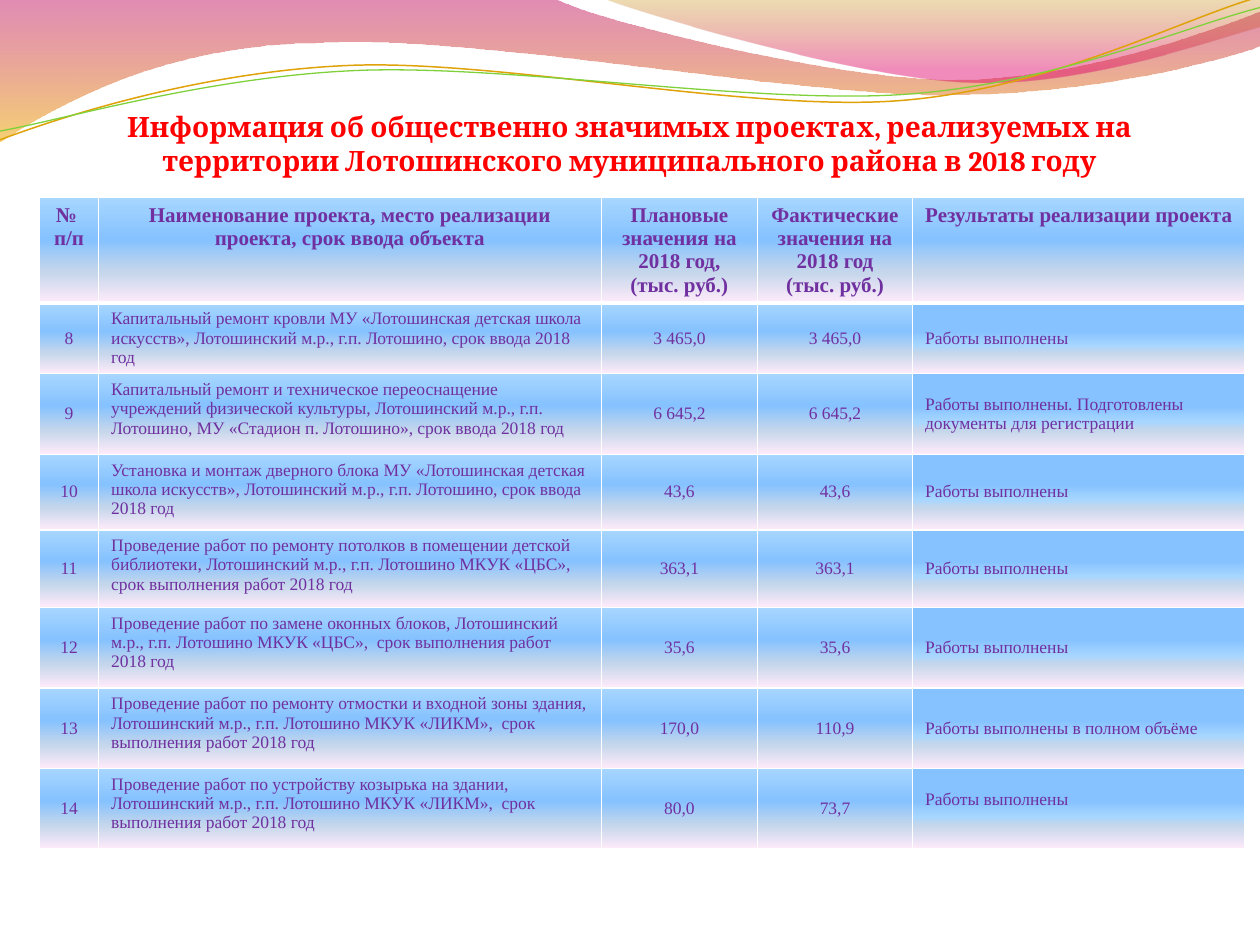
from lxml import etree
from pptx import Presentation
from pptx.dml.color import RGBColor
from pptx.enum.text import MSO_ANCHOR, MSO_AUTO_SIZE, PP_ALIGN
from pptx.oxml.ns import qn
from pptx.util import Inches, Pt

CENTER, LEFT = PP_ALIGN.CENTER, PP_ALIGN.LEFT
TOP, MIDDLE, BOTTOM = MSO_ANCHOR.TOP, MSO_ANCHOR.MIDDLE, MSO_ANCHOR.BOTTOM

# Gradient stops are (position %, colour, opacity %)
THEME = {
    "title_font": "Cambria", "title_size": Pt(16), "title_color": "FF0000",
    "table_font": "Times New Roman", "table_color": "7030A0",
    "header_size": Pt(12), "body_size": Pt(10),
    "border": "FFFFFF", "border_width": Pt(1), "header_rule": Pt(3),
    "cell": [(0, "A7D6FF", 100), (40, "85C2FF", 100),
             (70, "C4D6EB", 100), (100, "FFEBFA", 100)],
    "result_cell": [(40, "85C2FF", 100), (60, "A7D6FF", 100),
                    (70, "C4D6EB", 100), (100, "FFEBFA", 100)],
    "left_wave": [(0, "BD0059", 45), (100, "F0AB00", 55)],
    "right_wave": [(0, "C38B00", 30), (80, "E1006B", 45)],
    "gold": "E0A209", "green": "7FD13B",
}

prs = Presentation()
prs.slide_width, prs.slide_height = Inches(10), Inches(7.5)
UNIT = prs.slide_width // 100  # the slide is a grid of 100 columns by 75 rows
slide = prs.slides.add_slide(prs.slide_layouts[5])


def fill_gradient(fill, owner, stops):
    """Fill from top to bottom with the given stops; owner is the XML element."""
    fill.gradient()
    fill.gradient_angle = 270
    stop_list = owner.find(".//" + qn("a:gsLst"))
    for old_stop in list(stop_list):
        stop_list.remove(old_stop)
    for position, color, opacity in stops:
        stop = etree.SubElement(stop_list, qn("a:gs"), pos=str(position * 1000))
        rgb = etree.SubElement(stop, qn("a:srgbClr"), val=color)
        if opacity < 100:
            etree.SubElement(rgb, qn("a:alpha"), val=str(opacity * 1000))


def add_wave(segments, closed):
    """Draw segments of 1 point (straight) or 3 points (cubic curve)."""
    points = [(x * UNIT, y * UNIT) for segment in segments for x, y in segment]
    builder = slide.shapes.build_freeform(*points[0], scale=1)
    builder.add_line_segments(points[1:], close=closed)
    wave = builder.convert_to_shape()
    wave.shadow.inherit = False
    straight_steps = iter(list(wave._element.iter(qn("a:lnTo"))))
    for segment in segments[1:]:
        steps = [next(straight_steps) for _ in segment]
        if len(steps) == 3:
            curve = etree.Element(qn("a:cubicBezTo"))
            steps[0].addprevious(curve)
            for step in steps:
                curve.append(step[0])
                step.getparent().remove(step)
    return wave


# Waves along the top, in grid units
bands = [
    ("left_wave", [
        [(0, -0.1)], [(44, -0.1)],
        [(47.6, 1.7), (66.4, 6.3), (75.8, 6.3)],
        [(85.3, 6.3), (95.8, 2.6), (100, 0.9)], [(100.1, 3.6)],
        [(98.3, 4.4), (87, 7.6), (74.6, 7.5)],
        [(62.2, 7.5), (38.2, 2.8), (25.7, 3.4)],
        [(12.9, 3.5), (4.6, 8.3), (-0.1, 11.3)]]),
    ("right_wave", [
        [(47.9, -0.1)],
        [(50.9, 1.1), (68.2, 6.2), (76.9, 6.5)],
        [(85.6, 6.9), (96.1, 3.2), (100, 2.1)], [(100, 0)]]),
]
for stops_name, segments in bands:
    band = add_wave(segments, True)
    fill_gradient(band.fill, band._element.spPr, THEME[stops_name])
    band.line.fill.background()

strands = [
    ("gold", 0.85, [
        [(0, 11.1)],
        [(4.8, 9.3), (15.8, 5.7), (27.7, 5.2)],
        [(39.5, 4.7), (59.3, 8.9), (71.3, 8)],
        [(83.3, 7.1), (93.8, 1.5), (99.8, -0.2)]]),
    ("green", 0.75, [
        [(0, 10.4)],
        [(4.7, 9.6), (16.4, 6.1), (28.3, 5.6)],
        [(40.3, 5.1), (59.7, 8.3), (71.7, 7.5)],
        [(83.6, 6.7), (94.1, 2.1), (100, 0.6)]]),
]
for color_name, width, segments in strands:
    strand = add_wave(segments, False)
    strand.fill.background()
    strand.line.color.rgb = RGBColor.from_string(THEME[color_name])
    strand.line.width = Pt(width)

# Title, in front of the waves
title = slide.shapes.title
slide.shapes._spTree.append(title._element)
title.left, title.top, title.width, title.height = (
    round(n * UNIT) for n in (5, 7.65, 90, 6.4))
heading = title.text_frame
heading.text = ("Информация об общественно значимых проектах, реализуемых на "
                "территории Лотошинского муниципального района в 2018 году")
heading.word_wrap, heading.auto_size = True, MSO_AUTO_SIZE.NONE
heading.vertical_anchor = BOTTOM
heading.margin_left = heading.margin_right = heading.margin_bottom = 0
heading.margin_top = UNIT // 2
heading.paragraphs[0].alignment = CENTER
title_font = heading.paragraphs[0].runs[0].font
title_font.name, title_font.size, title_font.bold = (
    THEME["title_font"], THEME["title_size"], True)
title_font.color.rgb = RGBColor.from_string(THEME["title_color"])

# Projects table
DONE = "Работы выполнены"
projects = [
    ("№  п/п", "Наименование проекта, место реализации проекта, срок ввода объекта",
     "Плановые значения на 2018 год, (тыс. руб.)",
     "Фактические значения на 2018 год (тыс. руб.)", "Результаты реализации проекта"),
    ("8", "Капитальный ремонт кровли МУ «Лотошинская детская школа искусств», "
     "Лотошинский м.р., г.п. Лотошино, срок ввода 2018 год", "3 465,0", "3 465,0", DONE),
    ("9", "Капитальный ремонт и техническое переоснащение  учреждений физической культуры, "
     "Лотошинский м.р., г.п. Лотошино, МУ «Стадион п. Лотошино», срок ввода 2018 год",
     "6 645,2", "6 645,2", DONE + ". Подготовлены документы для регистрации"),
    ("10", "Установка и монтаж дверного блока МУ «Лотошинская детская школа искусств», "
     "Лотошинский м.р., г.п. Лотошино, срок ввода 2018 год", "43,6", "43,6", DONE),
    ("11", "Проведение работ по ремонту потолков в помещении детской библиотеки, "
     "Лотошинский м.р., г.п. Лотошино МКУК «ЦБС»,  срок выполнения работ 2018 год",
     "363,1", "363,1", DONE),
    ("12", "Проведение работ по замене оконных блоков, Лотошинский м.р., "
     "г.п. Лотошино МКУК «ЦБС»,  срок выполнения работ 2018 год", "35,6", "35,6", DONE),
    ("13", "Проведение работ по ремонту отмостки и входной зоны здания, Лотошинский м.р., "
     "г.п. Лотошино МКУК «ЛИКМ»,  срок выполнения работ 2018 год",
     "170,0", "110,9", DONE + " в полном объёме"),
    ("14", "Проведение работ по устройству козырька на здании, Лотошинский м.р., "
     "г.п. Лотошино МКУК «ЛИКМ»,  срок выполнения работ 2018 год", "80,0", "73,7", DONE),
]
column_units = [4.7, 39.9, 12.4, 12.3, 26.4]
row_units = [8.2, 5.5, 6.4, 6, 6.15, 6.4, 6.4, 6.4]
NAME_COLUMN, RESULT_COLUMN = 1, 4

table = slide.shapes.add_table(
    len(row_units), len(column_units), round(3.13 * UNIT), round(15.65 * UNIT),
    round(sum(column_units) * UNIT), round(sum(row_units) * UNIT)).table
table.horz_banding = False
for column, units in zip(table.columns, column_units):
    column.width = round(units * UNIT)
for row, units in zip(table.rows, row_units):
    row.height = round(units * UNIT)

for r, project in enumerate(projects):
    is_header = r == 0
    for c, wording in enumerate(project):
        cell = table.cell(r, c)
        cell.text_frame.text = wording
        centered = is_header or c not in (NAME_COLUMN, RESULT_COLUMN)
        cell.vertical_anchor = TOP if is_header or c == NAME_COLUMN else MIDDLE
        paragraph = cell.text_frame.paragraphs[0]
        paragraph.alignment = CENTER if centered else LEFT
        font = paragraph.runs[0].font
        font.name, font.bold = THEME["table_font"], is_header
        font.size = THEME["header_size" if is_header else "body_size"]
        font.color.rgb = RGBColor.from_string(THEME["table_color"])

        is_result = c == RESULT_COLUMN and not is_header
        properties = cell._tc.get_or_add_tcPr()
        fill_gradient(cell.fill, properties, THEME["result_cell" if is_result else "cell"])
        for i, side in enumerate(("lnL", "lnR", "lnT", "lnB")):
            under_header = (r, side) in ((0, "lnB"), (1, "lnT"))
            width = THEME["header_rule" if under_header else "border_width"]
            border = etree.Element(qn("a:" + side), w=str(int(width)))
            solid = etree.SubElement(border, qn("a:solidFill"))
            etree.SubElement(solid, qn("a:srgbClr"), val=THEME["border"])
            properties.insert(i, border)

# The last result sits slightly above the middle of its row
table.cell(len(projects) - 1, RESULT_COLUMN).margin_bottom = 2 * UNIT

prs.save("out.pptx")
